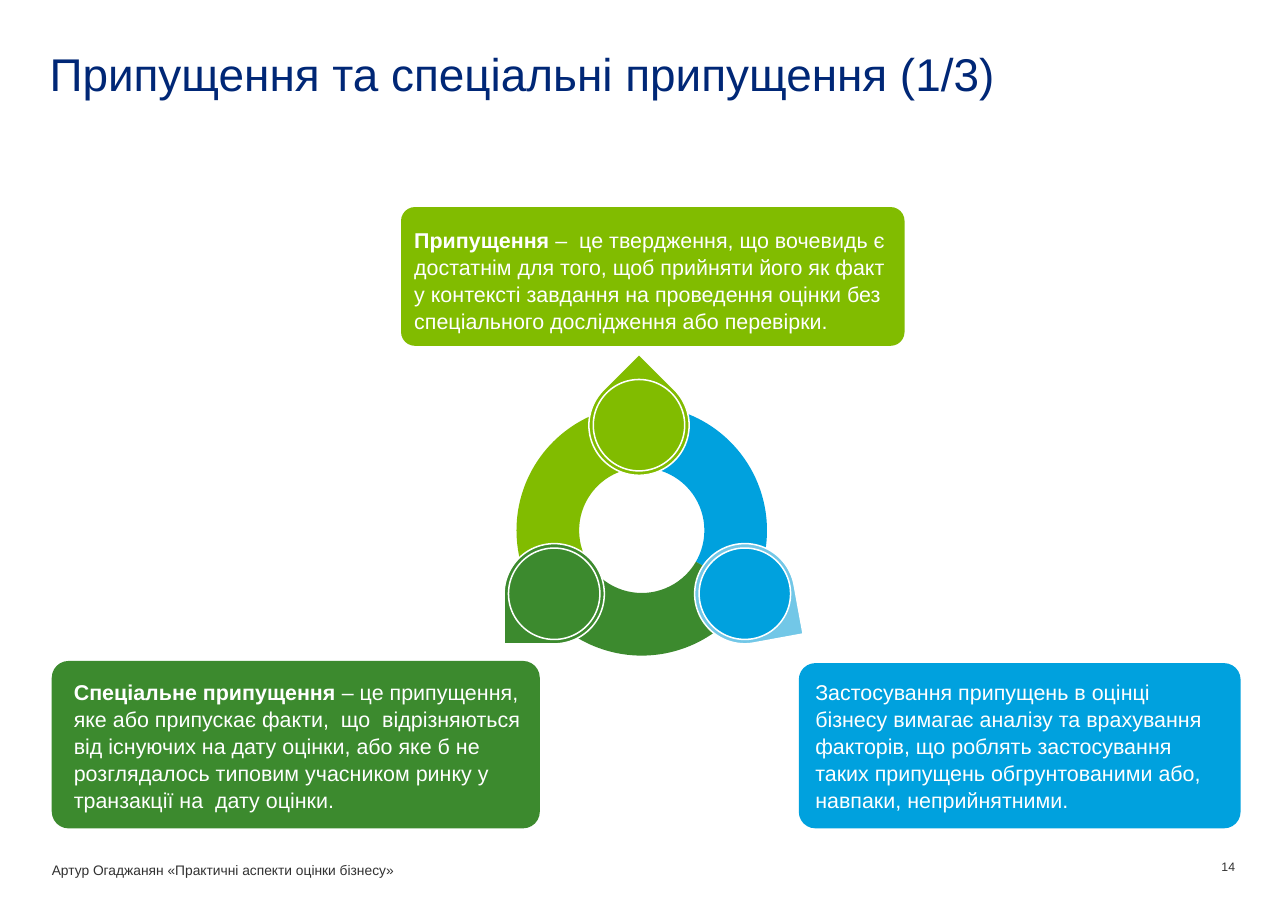
from pptx import Presentation
from pptx.chart.data import CategoryChartData
from pptx.dml.color import RGBColor
from pptx.enum.chart import XL_CHART_TYPE
from pptx.enum.shapes import MSO_SHAPE
from pptx.enum.text import MSO_ANCHOR, PP_ALIGN
from pptx.util import Inches, Pt

COLORS = {
    "lime": "81BC00", "green": "3C8A2E", "blue": "00A1DE", "sky": "72C7E7",
    "navy": "002776", "white": "FFFFFF", "gray": "313131", "black": "000000",
}
FONT = "Arial"
TITLE = "Припущення та спеціальні припущення (1/3)"
AUTHOR = "Артур Огаджанян «Практичні аспекти оцінки бізнесу»"
PAGE = "14"

RING_BOX = (4.05, 3.54, 3.55, 2.55)
RING = [("1", 33, "blue"), ("2", 33, "green"), ("3", 33, "lime")]

DROP_SIZE, DISC_SIZE = 0.91, 0.83
MARKERS = [
    {"center": (5.8, 3.86), "turn": 315, "drop": "lime", "disc": "lime"},
    {"center": (6.76, 5.39), "turn": 79.6, "drop": "sky", "disc": "blue"},
    {"center": (5.03, 5.39), "turn": 180, "drop": "green", "disc": "green"},
]

CARDS = [
    {"color": "lime", "panel": (3.64, 1.88, 4.57, 1.26), "text": (3.76, 2.05, 4.34, 0.94),
     "term": "Припущення",
     "meaning": " –  це твердження, що вочевидь є достатнім для того, щоб прийняти "
                "його як факт у контексті завдання на проведення оцінки без "
                "спеціального дослідження або перевірки."},
    {"color": "green", "panel": (0.47, 6, 4.43, 1.52), "text": (0.67, 6.15, 4.07, 1.18),
     "term": "Спеціальне припущення ",
     "meaning": "– це припущення, яке або припускає факти,  що  відрізняються від "
                "існуючих на дату оцінки, або яке б не розглядалось типовим "
                "учасником ринку у транзакції на  дату оцінки."},
    {"color": "blue", "panel": (7.25, 6.02, 4.01, 1.5), "text": (7.4, 6.15, 3.7, 1.18),
     "term": "",
     "meaning": "Застосування припущень в оцінці бізнесу вимагає аналізу та "
                "врахування факторів, що роблять застосування таких припущень "
                "обгрунтованими або, навпаки, неприйнятними."},
]


def rgb(name):
    return RGBColor.from_string(COLORS[name])


def inches(box):
    return [Inches(length) for length in box]


def style(font, size, color, bold=False):
    font.name, font.size, font.bold = FONT, Pt(size), bold
    font.color.rgb = rgb(color)


def clear_margins(frame, anchor=MSO_ANCHOR.TOP):
    frame.word_wrap = True
    frame.vertical_anchor = anchor
    frame.margin_left = frame.margin_right = frame.margin_top = frame.margin_bottom = 0


def add_filled(shapes, kind, box, color, outline=None):
    figure = shapes.add_shape(kind, *inches(box))
    figure.shadow.inherit = False
    figure.fill.solid()
    figure.fill.fore_color.rgb = rgb(color)
    if outline:
        figure.line.color.rgb = rgb(outline)
        figure.line.width = Pt(1)
    else:
        figure.line.fill.background()
    return figure


def add_text(shapes, box, pieces, size, color, anchor=MSO_ANCHOR.TOP, align=PP_ALIGN.LEFT):
    frame = shapes.add_textbox(*inches(box)).text_frame
    clear_margins(frame, anchor)
    paragraph = frame.paragraphs[0]
    paragraph.alignment = align
    for words, bold in pieces:
        if words:
            run = paragraph.add_run()
            run.text = words
            style(run.font, size, color, bold)
    return paragraph


def add_title(slide):
    title = slide.shapes.title
    title.left, title.top, title.width, title.height = inches((0.45, 0.41, 9.17, 0.5))
    title.text_frame.text = TITLE
    clear_margins(title.text_frame)
    heading = title.text_frame.paragraphs[0]
    heading.alignment = PP_ALIGN.LEFT
    style(heading.runs[0].font, 30, "navy")


def add_ring(shapes):
    data = CategoryChartData()
    data.categories = [label for label, _, _ in RING]
    data.add_series("Series 1", [share for _, share, _ in RING])
    ring = shapes.add_chart(XL_CHART_TYPE.DOUGHNUT, *inches(RING_BOX), data).chart
    ring.has_legend = ring.has_title = False
    style(ring.font, 18, "black")
    plot = ring.plots[0]
    plot.vary_by_categories = True
    plot._element.find("{*}holeSize").set("val", "65")
    for index, (_, _, color) in enumerate(RING):
        segment = plot.series[0].points[index].format
        segment.fill.solid()
        segment.fill.fore_color.rgb = rgb(color)
        segment.line.fill.background()


def add_marker(shapes, marker):
    x, y = marker["center"]
    group = shapes.add_group_shape()
    for kind, size, part in ((MSO_SHAPE.TEAR, DROP_SIZE, "drop"),
                             (MSO_SHAPE.OVAL, DISC_SIZE, "disc")):
        box = (x - size / 2, y - size / 2, size, size)
        add_filled(group.shapes, kind, box, marker[part], "white").rotation = marker["turn"]


def add_card(shapes, card):
    panel = add_filled(shapes, MSO_SHAPE.ROUNDED_RECTANGLE, card["panel"], card["color"])
    panel.adjustments[0] = 0.1
    pieces = [(card["term"], True), (card["meaning"], False)]
    add_text(shapes, card["text"], pieces, 14, "white").line_spacing = 1.05


def main():
    deck = Presentation()
    deck.slide_width, deck.slide_height = Inches(11.69), Inches(8.27)
    slide = deck.slides.add_slide(deck.slide_layouts[5])
    shapes = slide.shapes
    add_title(slide)
    add_ring(shapes)
    for marker in MARKERS:
        add_marker(shapes, marker)
    for card in CARDS:
        add_card(shapes, card)
    add_text(shapes, (0.47, 7.76, 8.69, 0.28), [(AUTHOR, False)], 9, "gray", MSO_ANCHOR.MIDDLE)
    add_text(shapes, (10.2, 7.72, 1.01, 0.3), [(PAGE, False)], 8, "gray",
             MSO_ANCHOR.MIDDLE, PP_ALIGN.RIGHT)
    deck.save("out.pptx")


if __name__ == "__main__":
    main()
